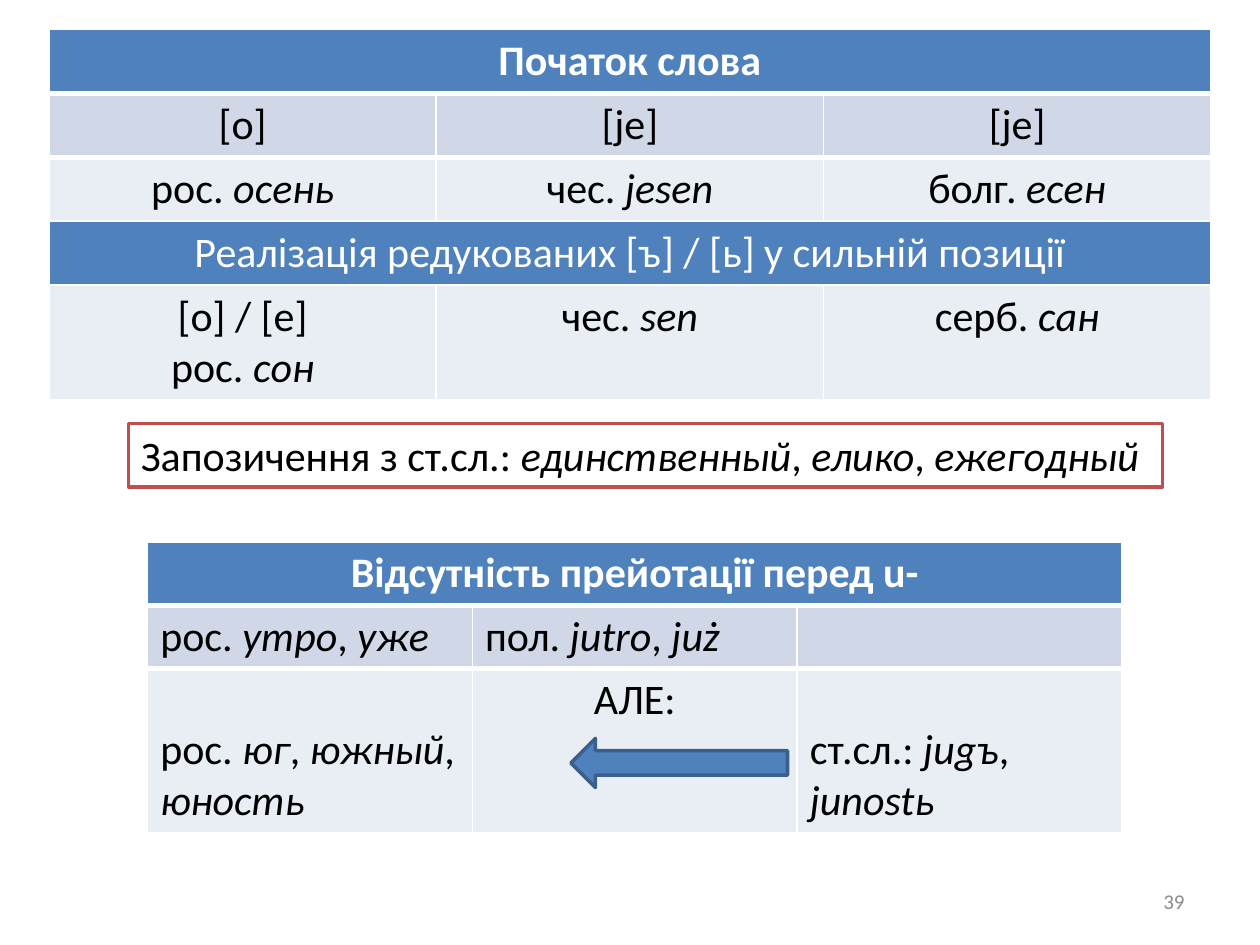
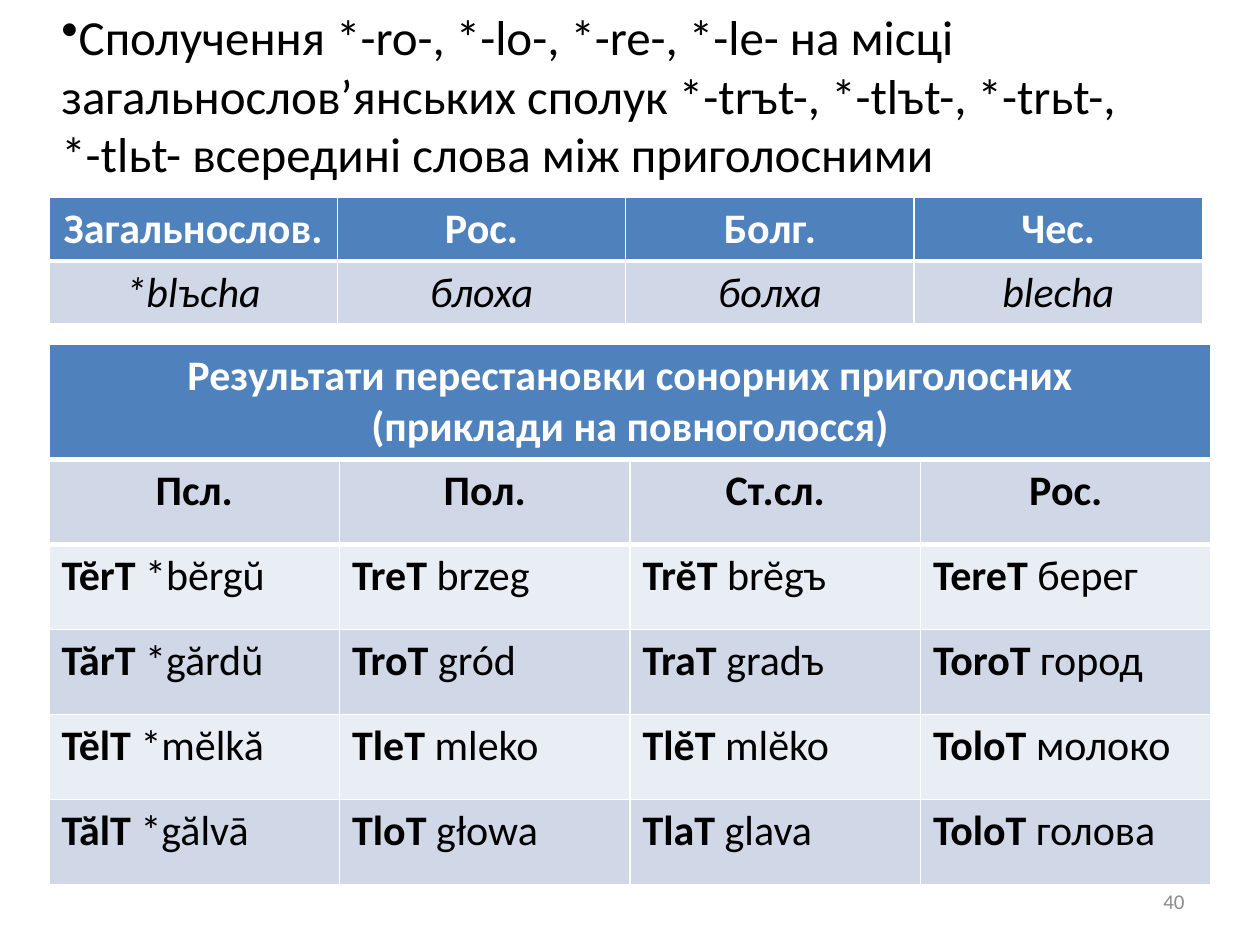
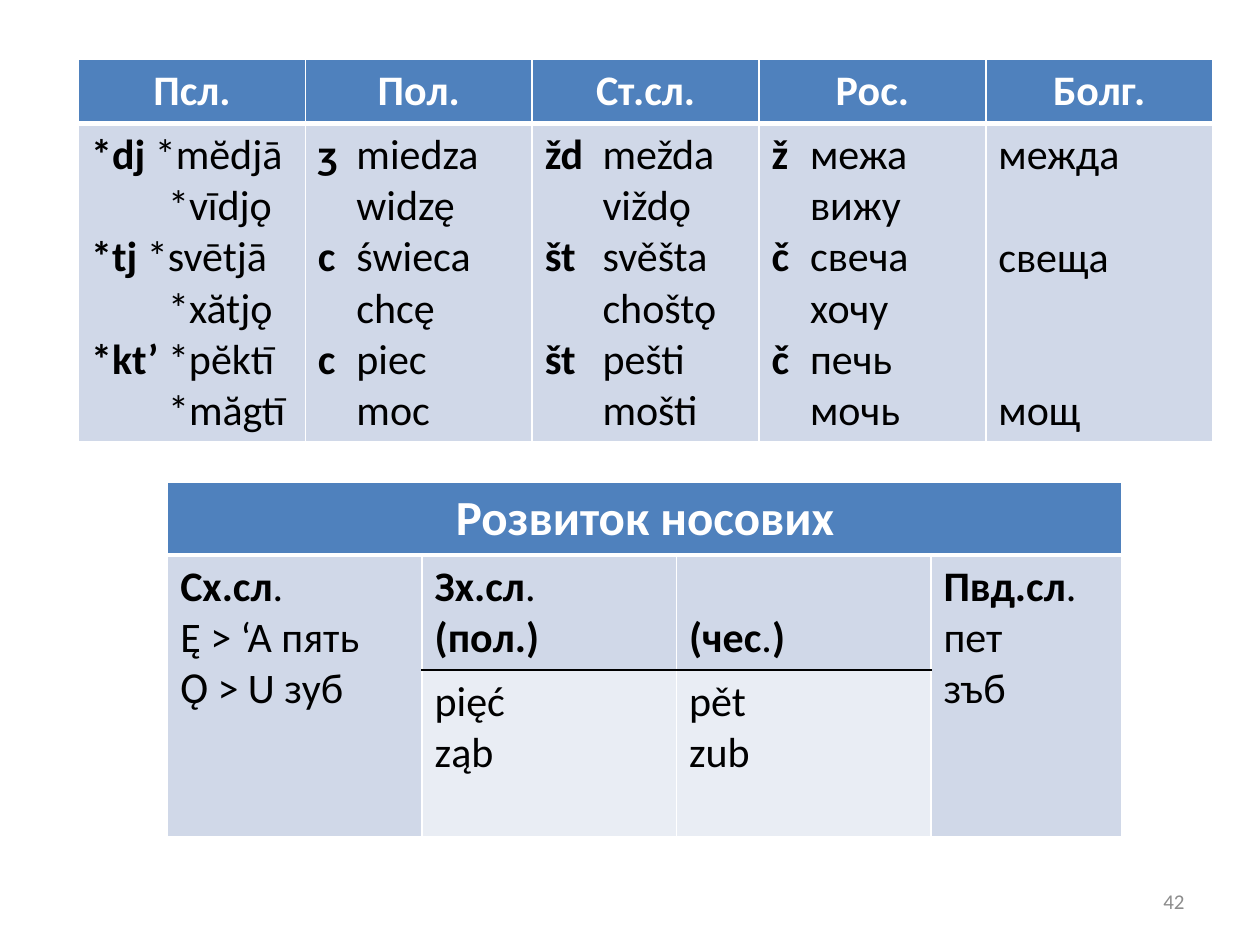
from dataclasses import dataclass

from lxml.etree import SubElement
from pptx import Presentation
from pptx.dml.color import RGBColor
from pptx.enum.shapes import MSO_SHAPE as Preset
from pptx.enum.text import MSO_ANCHOR as Anchor, MSO_AUTO_SIZE as AutoSize, PP_ALIGN as Align
from pptx.oxml import parse_xml
from pptx.oxml.ns import nsdecls, qn
from pptx.util import Pt

# Shared look
FONT = "Calibri"
BLUE, LIGHT, PALE = "4F81BD", "D0D8E8", "E9EDF4"
WHITE, BLACK, GREY = "FFFFFF", "000000", "8C8C8C"
RED, NAVY = "C0504D", "3A5F8C"
LINE = 29.3  # height of one 24 pt line
ONE, TWO, THREE = (round(LINE * count + 7.2, 1) for count in (1, 2, 3))  # row heights


@dataclass
class Row:
    """Cell texts: | switches bold, _ switches italic, a line end starts a paragraph."""
    texts: list[str]
    height: float
    fill: str = LIGHT
    color: str = BLACK
    align: Align = Align.LEFT
    size: float = 24


@dataclass
class Grid:
    left: float
    top: float
    widths: list[float]
    rows: list[Row]


def header(*texts: str, height: float = ONE, size: float = 24) -> Row:
    return Row(list(texts), height, BLUE, WHITE, Align.CENTER, size)


def rgb(value: str) -> RGBColor:
    return RGBColor.from_string(value)


def paint(target, color: str) -> None:
    target.solid()
    target.fore_color.rgb = rgb(color)


def write(frame, text: str, size: float, color: str = BLACK, align: Align = Align.LEFT) -> None:
    """Fill a text frame with marked-up paragraphs."""
    bold = italic = False
    lines = text.split("\n")
    frame.text = "\n" * (len(lines) - 1)
    for para, line in zip(frame.paragraphs, lines):
        para.alignment = align
        for part in line.replace("|", "\0|\0").replace("_", "\0_\0").split("\0"):
            if part == "|":
                bold = not bold
            elif part == "_":
                italic = not italic
            elif part:
                span = para.add_run()
                span.text = part
                font = span.font
                font.name, font.size = FONT, Pt(size)
                font.bold, font.italic = bold, italic
                font.color.rgb = rgb(color)


def set_edge(cell, side: str, color: str, width: float) -> None:
    """Give one side of a filled cell a line, placed just before the fill."""
    edge = parse_xml(f'<a:{side} {nsdecls("a")} w="{Pt(width)}"><a:solidFill>'
                     f'<a:srgbClr val="{color}"/></a:solidFill></a:{side}>')
    props = cell._tc.get_or_add_tcPr()
    props.insert(len(props) - 1, edge)


def draw_grid(page, grid: Grid):
    """Draw a table; a row with one text is merged across all columns."""
    rows, widths = grid.rows, grid.widths
    frame = page.shapes.add_table(len(rows), len(widths), Pt(grid.left), Pt(grid.top),
                                  Pt(sum(widths)), Pt(sum(row.height for row in rows)))
    table = frame.table
    for column, width in enumerate(widths):
        table.columns[column].width = Pt(width)
    for index, row in enumerate(rows):
        table.rows[index].height = Pt(row.height)
        for cell in table.rows[index].cells:
            paint(cell.fill, row.fill)
        for column, text in enumerate(row.texts):
            if text:
                write(table.cell(index, column).text_frame, text, row.size, row.color, row.align)
        if len(row.texts) == 1:
            table.cell(index, 0).merge(table.cell(index, len(widths) - 1))
    # Thick rule under the heading
    for column in range(len(widths)):
        set_edge(table.cell(0, column), "lnB", WHITE, 3)
        set_edge(table.cell(1, column), "lnT", WHITE, 3)
    return table


def draw_text(page, text: str, left: float, top: float, width: float, height: float,
              size: float, color: str = BLACK, align: Align = Align.LEFT):
    box = page.shapes.add_textbox(Pt(left), Pt(top), Pt(width), Pt(height))
    box.text_frame.word_wrap = True
    write(box.text_frame, text, size, color, align)
    return box


def draw_shape(page, preset: Preset, left: float, top: float, width: float, height: float,
               fill: str, line: str):
    shape = page.shapes.add_shape(preset, Pt(left), Pt(top), Pt(width), Pt(height))
    shape.shadow.inherit = False
    paint(shape.fill, fill)
    paint(shape.line.fill, line)
    shape.line.width = Pt(2)
    return shape


def draw_number(page, number: int) -> None:
    box = draw_text(page, str(number), 516, 500.5, 168, 28.8, 12, GREY, Align.RIGHT)
    box.text_frame.vertical_anchor = Anchor.MIDDLE


def hang(frame, indent: float) -> None:
    """Indent paragraphs; those that open with a bold label hang to the left."""
    for para in frame.paragraphs:
        props = para._p.get_or_add_pPr()
        props.set("marL", str(Pt(indent)))
        props.set("indent", str(Pt(-indent if para.runs[0].font.bold else 0)))


def build_word_start(page) -> None:
    draw_grid(page, Grid(28, 16.8, [221.3] * 3, [
        header("|Початок слова"),
        Row(["[o]", "[je]", "[je]"], ONE, align=Align.CENTER),
        Row(["рос. _осень", "чес. _jesen", "болг. _есен"], ONE, PALE, align=Align.CENTER),
        header("Реалізація редукованих [ъ] / [ь] у сильній позиції"),
        Row(["[o] / [e]\nрос. _сон", "чес. _sen", "серб. _сан"], TWO, PALE, align=Align.CENTER),
    ]))

    # Framed note on loanwords
    note = draw_shape(page, Preset.RECTANGLE, 73.4, 241.9, 591, 36.4, WHITE, RED)
    write(note.text_frame, "Запозичення з ст.сл.: _единственный_, _елико_, _ежегодный", 24)
    note.text_frame.word_wrap = False
    note.text_frame.auto_size = AutoSize.SHAPE_TO_FIT_TEXT

    table = draw_grid(page, Grid(84.4, 309.6, [185.6] * 3, [
        header("|Відсутність прейотації перед u-"),
        Row(["рос. _утро_, _уже", "пол. _jutro_, _już", ""], 36),
        Row(["рос. _юг_, _южный_, _юность", "АЛЕ:", "ст.сл.: _jugъ_, _junostь"], 94, PALE),
    ]))
    table.cell(2, 1).text_frame.paragraphs[0].alignment = Align.CENTER
    for column in (0, 2):
        table.cell(2, column).vertical_anchor = Anchor.BOTTOM
    draw_shape(page, Preset.LEFT_ARROW, 326.2, 421.9, 123.8, 28.1, BLUE, NAVY)
    draw_number(page, 39)


def build_metathesis(page) -> None:
    intro = draw_text(page, "Сполучення *-ro-, *-lo-, *-re-, *-le- на місці загальнослов’янських "
                      "сполук *-trъt-, *-tlъt-, *-trьt-,\n*-tlьt- всередині слова між приголосними",
                      28, 0, 664, 108.7, 28)
    bullet = SubElement(intro.text_frame.paragraphs[0]._p.get_or_add_pPr(), qn("a:buChar"))
    bullet.set("char", "•")

    draw_grid(page, Grid(28, 112.6, [164.8] * 4, [
        header("|Загальнослов.", "|Рос.", "|Болг.", "|Чес."),
        Row(["_*blъcha", "_блоха", "_болха", "_blecha"], 35.5, align=Align.CENTER),
    ]))

    # Rows are low enough to leave the page number clear
    examples = [
        ["|TĕrT| *bĕrgŭ", "|TreT |brzeg", "|TrĕT |brĕgъ", "|TereT |берег"],
        ["|TărT| *gărdŭ", "|TroT| gród", "|TraT| gradъ", "|ToroT |город"],
        ["|TĕlT| *mĕlkă", "|TleT| mleko", "|TlĕT |mlĕko", "|ToloT |молоко"],
        ["|TălT |*gălvā", "|TloT| głowa", "|TlaT |glava", "|ToloT |голова"],
    ]
    height = 48.6
    draw_grid(page, Grid(28, 196.8, [166] * 4, [
        header("|Результати перестановки сонорних приголосних\n(приклади на повноголосся)",
               height=TWO),
        Row(["|Псл.", "|Пол.", "|Ст.сл.", "|Рос."], height, align=Align.CENTER),
        *(Row(texts, height, (PALE, LIGHT)[index % 2]) for index, texts in enumerate(examples)),
    ]))
    draw_number(page, 40)


def build_nasals(page) -> None:
    # Reflexes of *dj, *tj and *kt’
    reflexes = [
        "|*dj |*mĕdjā\n*vīdjǫ\n|*tj |*svētjā\n*xătjǫ\n|*kt’ |*pĕktī\n*măgtī",
        "|ʒ\t|miedza\nwidzę\n|c\t|świeca\nchcę\n|c\t|piec\nmoc",
        "|žd\t|mežda\nviždǫ\n|št\t|svěšta\nchoštǫ\n|št\t|pešti\nmošti",
        "|ž\t|межа\nвижу\n|č\t|свеча\nхочу\n|č\t|печь\nмочь",
        "межда\nсвеща\nмощ",
    ]
    table = draw_grid(page, Grid(44.9, 34, [129.6] * 5, [
        header("|Псл.", "|Пол.", "|Ст.сл.", "|Рос.", "|Болг."),
        Row(reflexes, 182.2),
    ]))
    for column, indent in enumerate((44, 22, 33, 22)):
        hang(table.cell(1, column).text_frame, indent)
    for para, skipped in zip(table.cell(1, 4).text_frame.paragraphs, (0, 1, 2)):
        para.space_before = Pt(LINE * skipped)

    # Development of the nasal vowels
    table = draw_grid(page, Grid(95.8, 275.8, [145.4, 145.4, 145.4, 109.2], [
        header("|Розвиток носових", height=41.4, size=28),
        Row(["|Сх.сл|.\nĘ > ‘A пять\nǪ > U зуб", "|Зх.сл|.\n|(пол.)", "|(чес|.|)",
             "|Пвд.сл|.\nпет\nзъб"], TWO),
        Row(["", "pięć\nząb", "pět\nzub", ""], THREE, PALE),
    ]))
    for column in (0, 3):
        table.cell(1, column).merge(table.cell(2, column))
    for column in (1, 2):
        set_edge(table.cell(1, column), "lnB", BLACK, 1)
        set_edge(table.cell(2, column), "lnT", BLACK, 1)
    table.cell(1, 2).vertical_anchor = Anchor.BOTTOM
    draw_number(page, 42)


def main() -> None:
    deck = Presentation()
    deck.slide_width, deck.slide_height = Pt(720), Pt(540)
    for build in (build_word_start, build_metathesis, build_nasals):
        build(deck.slides.add_slide(deck.slide_layouts[6]))
    deck.save("out.pptx")


if __name__ == "__main__":
    main()
